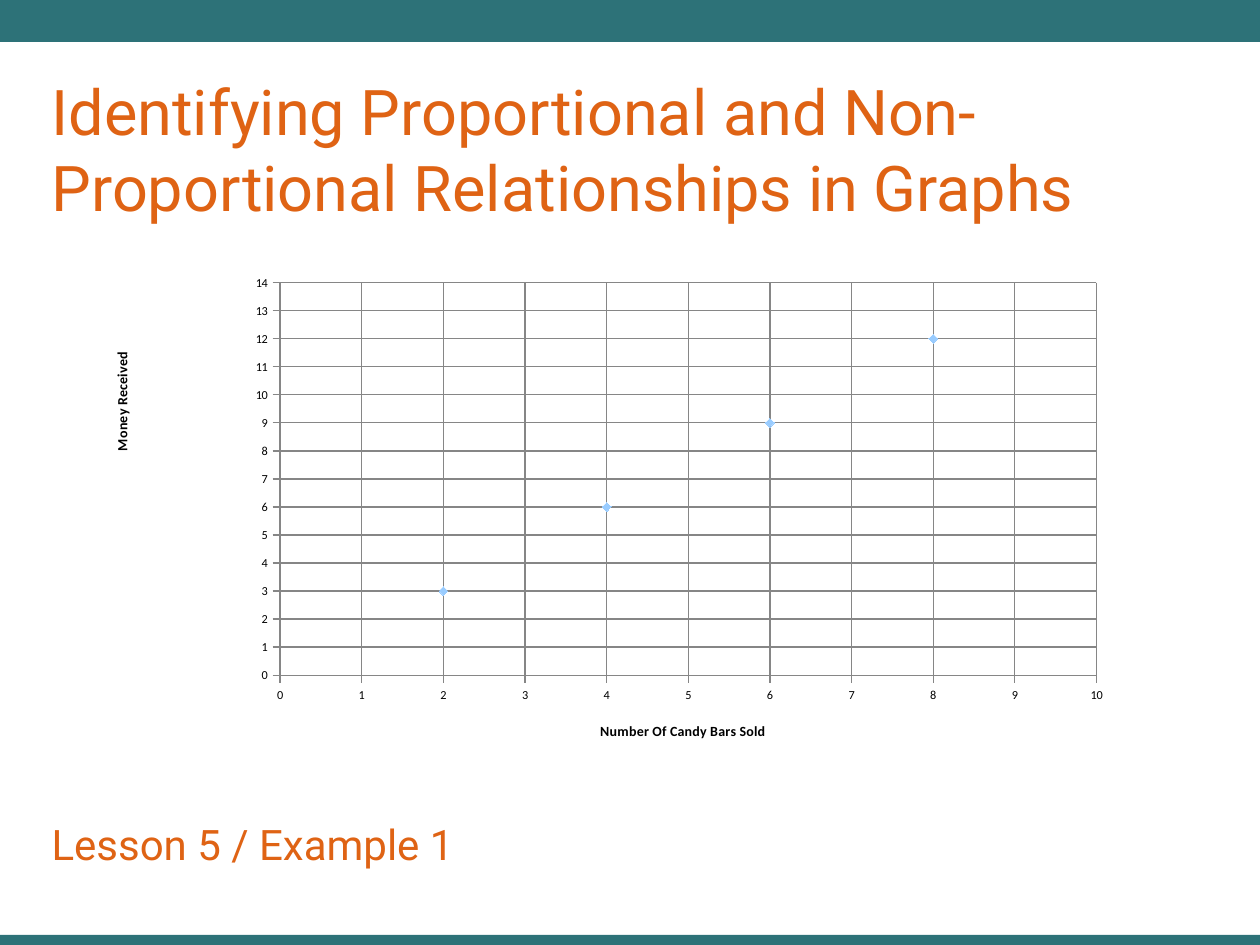
import pptx
import pptx.chart.data
import pptx.dml.color
import pptx.enum.chart
import pptx.enum.shapes
import pptx.enum.text
import pptx.oxml
import pptx.oxml.ns
import pptx.util

PX = 914400 / 126
TEAL, ORANGE, GRAY, BLACK = "2D7278", "DF6314", "868686", "000000"
MARKER_BLUE = "99CCFF"


def px(length):
    return pptx.util.Emu(round(length * PX))


def color(hex_string):
    return pptx.dml.color.RGBColor.from_string(hex_string)


def place(shape, left, top, width, height):
    shape.left, shape.top = px(left), px(top)
    shape.width, shape.height = px(width), px(height)


def style_font(font, size, name="Calibri", hex_color=BLACK, bold=False):
    font.size = pptx.util.Pt(size)
    font.name = name
    font.bold = bold
    font.color.rgb = color(hex_color)


def add_bar(slide, top, height):
    bar = slide.shapes.add_shape(
        pptx.enum.shapes.MSO_SHAPE.RECTANGLE, 0, px(top), px(1260), px(height))
    bar.shadow.inherit = False
    bar.fill.solid()
    bar.fill.fore_color.rgb = color(TEAL)
    bar.line.fill.background()


def fill_placeholder(placeholder, text, size, box):
    place(placeholder, *box)
    frame = placeholder.text_frame
    frame.word_wrap = True
    frame.auto_size = pptx.enum.text.MSO_AUTO_SIZE.NONE
    frame.vertical_anchor = pptx.enum.text.MSO_ANCHOR.BOTTOM
    paragraph = frame.paragraphs[0]
    paragraph.alignment = pptx.enum.text.PP_ALIGN.LEFT
    paragraph.space_before = pptx.util.Pt(0)
    properties = paragraph._p.get_or_add_pPr()
    properties.set("marL", "0")
    properties.set("indent", "0")
    properties.append(pptx.oxml.parse_xml(
        f"<a:buNone {pptx.oxml.ns.nsdecls('a')}/>"))
    run = paragraph.add_run()
    run.text = text
    style_font(run.font, size, "Roboto", ORANGE)


def set_layout(element, position, x, y, width=None, height=None):
    """Fix a chart part at fractions of the chart area."""
    values = [("layoutTarget", "inner")] if width else []
    values += [("xMode", "edge"), ("yMode", "edge"), ("x", x), ("y", y)]
    if width:
        values += [("w", width), ("h", height)]
    children = "".join(f'<c:{tag} val="{value}"/>' for tag, value in values)
    for empty_layout in element.findall(pptx.oxml.ns.qn("c:layout")):
        element.remove(empty_layout)
    element.insert(position, pptx.oxml.parse_xml(
        f"<c:layout {pptx.oxml.ns.nsdecls('c')}>"
        f"<c:manualLayout>{children}</c:manualLayout></c:layout>"))


def style_axis(axis, title, maximum, title_position):
    axis.minimum_scale, axis.maximum_scale, axis.major_unit = 0, maximum, 1
    axis.major_tick_mark = pptx.enum.chart.XL_TICK_MARK.OUTSIDE
    axis.minor_tick_mark = pptx.enum.chart.XL_TICK_MARK.NONE
    axis.has_major_gridlines = True
    for line in (axis.format.line, axis.major_gridlines.format.line):
        line.color.rgb = color(GRAY)
        line.width = pptx.util.Pt(0.75)
    style_font(axis.tick_labels.font, 7)
    axis.tick_labels.number_format = "General"
    axis.tick_labels.number_format_is_linked = False
    run = axis.axis_title.text_frame.paragraphs[0].add_run()
    run.text = title
    style_font(run.font, 8, bold=True)
    set_layout(axis.axis_title._element, 1, *title_position)


def add_candy_chart(slide):
    data = pptx.chart.data.XyChartData()
    sales = data.add_series("Series 1")
    for bars_sold, money in ((2, 3), (4, 6), (6, 9), (8, 12)):
        sales.add_data_point(bars_sold, money)
    chart = slide.shapes.add_chart(
        pptx.enum.chart.XL_CHART_TYPE.XY_SCATTER,
        px(42), px(244), px(1134), px(553), data).chart
    chart.has_title = False
    chart.has_legend = False
    style_font(chart.font, 10)
    plot = chart.plots[0]
    plot.vary_by_categories = False
    series = plot.series[0]
    series.format.line.fill.background()
    series.marker.style = pptx.enum.chart.XL_MARKER_STYLE.DIAMOND
    series.marker.size = 5
    series.marker.format.fill.solid()
    series.marker.format.fill.fore_color.rgb = color(MARKER_BLUE)
    series.marker.format.line.color.rgb = color(MARKER_BLUE)
    style_axis(chart.category_axis, "Number Of Candy Bars Sold", 10, (0.49, 0.86))
    style_axis(chart.value_axis, "Money Received", 14, (0.06, 0.19))
    plot_area = chart._chartSpace.chart.plotArea
    set_layout(plot_area, 0, 0.21, 0.07, 0.72, 0.71)


def main():
    presentation = pptx.Presentation()
    presentation.slide_width, presentation.slide_height = px(1260), px(945)
    slide = presentation.slides.add_slide(presentation.slide_layouts[1])
    add_bar(slide, 0, 42)
    add_bar(slide, 935, 21)
    fill_placeholder(
        slide.shapes.title,
        "Identifying Proportional and Non-Proportional Relationships in Graphs",
        36, (39, 42, 1134, 188))
    fill_placeholder(
        slide.placeholders[1], "Lesson 5 / Example 1", 24, (39, 798, 1137, 77))
    add_candy_chart(slide)
    presentation.save("out.pptx")


if __name__ == "__main__":
    main()
